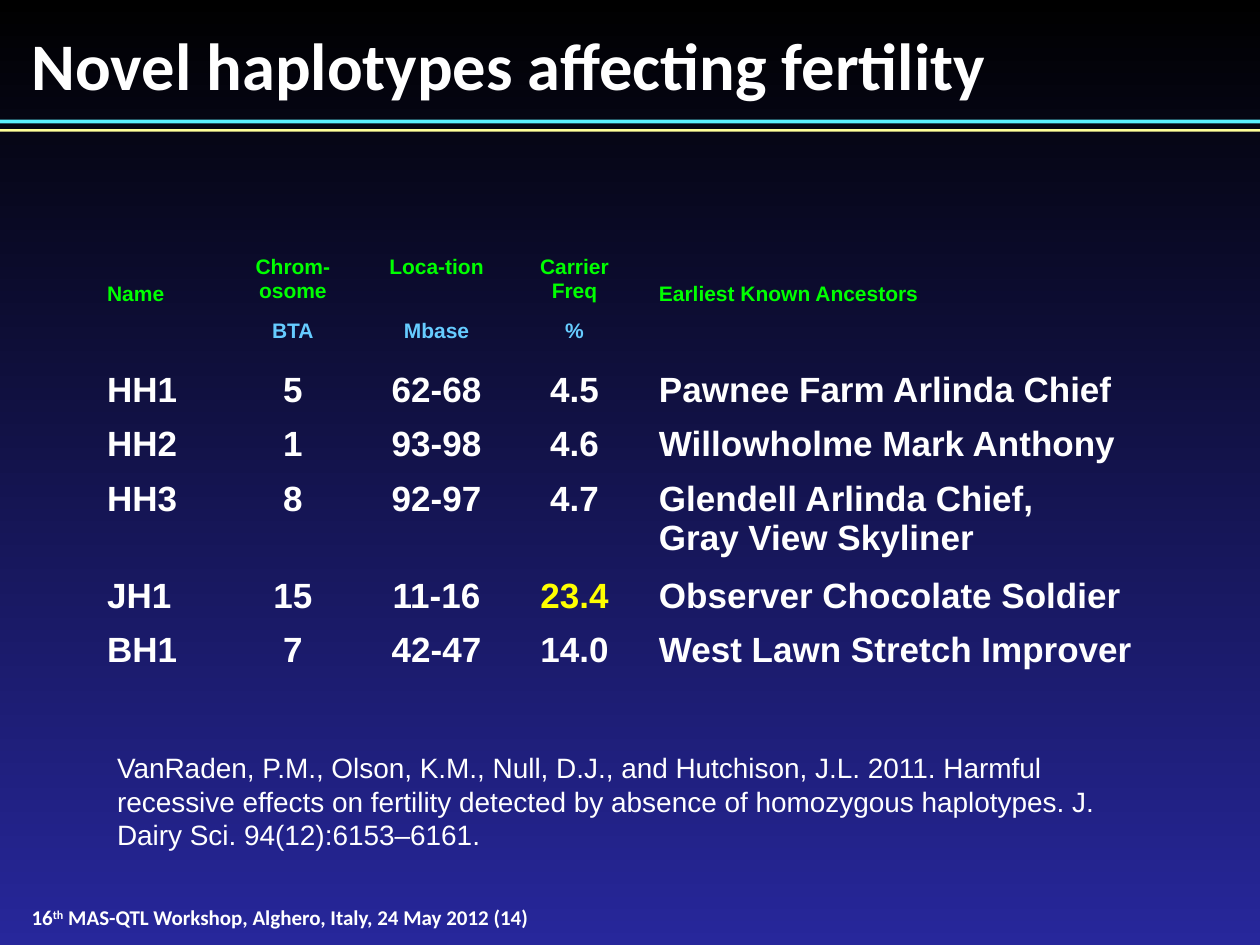
from pptx import Presentation
from pptx.dml.color import RGBColor
from pptx.enum.shapes import MSO_SHAPE
from pptx.enum.text import MSO_ANCHOR, PP_ALIGN
from pptx.util import Pt

RECTANGLE = MSO_SHAPE.RECTANGLE
TOP, MIDDLE, BOTTOM = MSO_ANCHOR.TOP, MSO_ANCHOR.MIDDLE, MSO_ANCHOR.BOTTOM
LEFT, CENTER = PP_ALIGN.LEFT, PP_ALIGN.CENTER

TITLE = "Novel haplotypes affecting fertility"
HEADINGS = ["Name", "Chrom-osome", "Loca-tion", "Carrier Freq", "Earliest Known Ancestors"]
UNITS = ["", "BTA", "Mbase", "%", ""]
HAPLOTYPES = [
    ["HH1", "5", "62-68", "4.5", "Pawnee Farm Arlinda Chief"],
    ["HH2", "1", "93-98", "4.6", "Willowholme Mark Anthony"],
    ["HH3", "8", "92-97", "4.7", "Glendell Arlinda Chief,\nGray View Skyliner"],
    ["JH1", "15", "11-16", "23.4", "Observer Chocolate Soldier"],
    ["BH1", "7", "42-47", "14.0", "West Lawn Stretch Improver"],
]
HIGHEST_FREQUENCY = "23.4"
CITATION = (
    "VanRaden, P.M., Olson, K.M., Null, D.J., and Hutchison, J.L. 2011. Harmful "
    "recessive effects on fertility detected by absence of homozygous haplotypes. "
    "J. Dairy Sci. 94(12):6153–6161."
)
FOOTER = ["16", "th", " MAS-QTL Workshop, Alghero, Italy, 24 May 2012 (14)"]

THEME = {
    "title_font": "Calibri", "body_font": "Arial",
    "title_size": 38, "data_size": 20, "citation_size": 16, "small_size": 12,
    "sky": "000000", "ground": "27279B",
    "text": "FFFFFF", "heading": "00FF00", "unit": "66CCFF", "highlight": "FFFF00",
    "upper_rule": "5BEFFF", "lower_rule": "FFFF99",
}
SLIDE_WIDTH, SLIDE_HEIGHT = 720, 540
COLUMN_WIDTHS = [69.1, 88.6, 75.6, 82.1, 302.4]
ROW_HEIGHT = 29.5
NO_TABLE_STYLE = "{2D5ABB26-0587-4C30-8999-92F81FD0307C}"


def color(role):
    return RGBColor.from_string(THEME[role])


def format_runs(paragraph, font, size, role, bold=True):
    for run in paragraph.runs:
        run.font.name = THEME[font]
        run.font.size = Pt(THEME[size])
        run.font.bold = bold
        run.font.color.rgb = color(role)


def add_text(slide, box, pieces, font, size, bold=True, anchor=TOP, inset=(0, 0)):
    frame = slide.shapes.add_textbox(*map(Pt, box)).text_frame
    frame.word_wrap = True
    frame.vertical_anchor = anchor
    frame.margin_left = frame.margin_right = Pt(inset[0])
    frame.margin_top = frame.margin_bottom = Pt(inset[1])
    paragraph = frame.paragraphs[0]
    for piece in pieces:
        paragraph.add_run().text = piece
    format_runs(paragraph, font, size, "text", bold)
    return paragraph


def add_rule(slide, top, height, role):
    rule = slide.shapes.add_shape(RECTANGLE, 0, Pt(top), Pt(SLIDE_WIDTH), Pt(height))
    rule.shadow.inherit = False
    rule.fill.solid()
    rule.fill.fore_color.rgb = color(role)
    rule.line.fill.background()


def add_haplotype_table(slide):
    rows = [HEADINGS, UNITS, *HAPLOTYPES]
    table = slide.shapes.add_table(
        len(rows), len(HEADINGS), Pt(54), Pt(142.6),
        Pt(sum(COLUMN_WIDTHS)), Pt(ROW_HEIGHT * len(rows)),
    ).table
    table.first_row = table.horz_banding = False
    table._tbl.tblPr.find("{*}tableStyleId").text = NO_TABLE_STYLE
    for column, width in zip(table.columns, COLUMN_WIDTHS):
        column.width = Pt(width)

    row_styles = [("small_size", "heading"), ("small_size", "unit")]
    row_styles += [("data_size", "text")] * len(HAPLOTYPES)
    last = len(HEADINGS) - 1
    for r, (texts, (size, role)) in enumerate(zip(rows, row_styles)):
        table.rows[r].height = Pt(ROW_HEIGHT)
        for c, text in enumerate(texts):
            cell = table.cell(r, c)
            cell.fill.background()
            outer = c in (0, last)
            cell.vertical_anchor = BOTTOM if r == 0 and outer else TOP
            cell.text_frame.text = text
            cell_role = "highlight" if text == HIGHEST_FREQUENCY else role
            for paragraph in cell.text_frame.paragraphs:
                paragraph.alignment = LEFT if outer else CENTER
                format_runs(paragraph, "body_font", size, cell_role)


def main():
    deck = Presentation()
    deck.slide_width, deck.slide_height = Pt(SLIDE_WIDTH), Pt(SLIDE_HEIGHT)
    slide = deck.slides.add_slide(deck.slide_layouts[6])

    backdrop = slide.background.fill
    backdrop.gradient()
    backdrop.gradient_angle = 270
    for stop, position, role in zip(backdrop.gradient_stops, (0, 1), ("sky", "ground")):
        stop.position = position
        stop.color.rgb = color(role)

    footer = add_text(slide, (18, 517, 375.8, 14.4), FOOTER,
                      "title_font", "small_size", anchor=MIDDLE)
    footer.runs[1].font._element.set("baseline", "30000")
    add_rule(slide, 68.4, 2.2, "upper_rule")
    add_rule(slide, 73.8, 1.4, "lower_rule")
    add_text(slide, (18, 13.7, 684, 46.1), [TITLE], "title_font", "title_size")
    add_haplotype_table(slide)
    add_text(slide, (59.8, 425.5, 588.2, 65.5), [CITATION],
             "body_font", "citation_size", bold=False, inset=(7.2, 3.6))
    deck.save("out.pptx")


if __name__ == "__main__":
    main()
